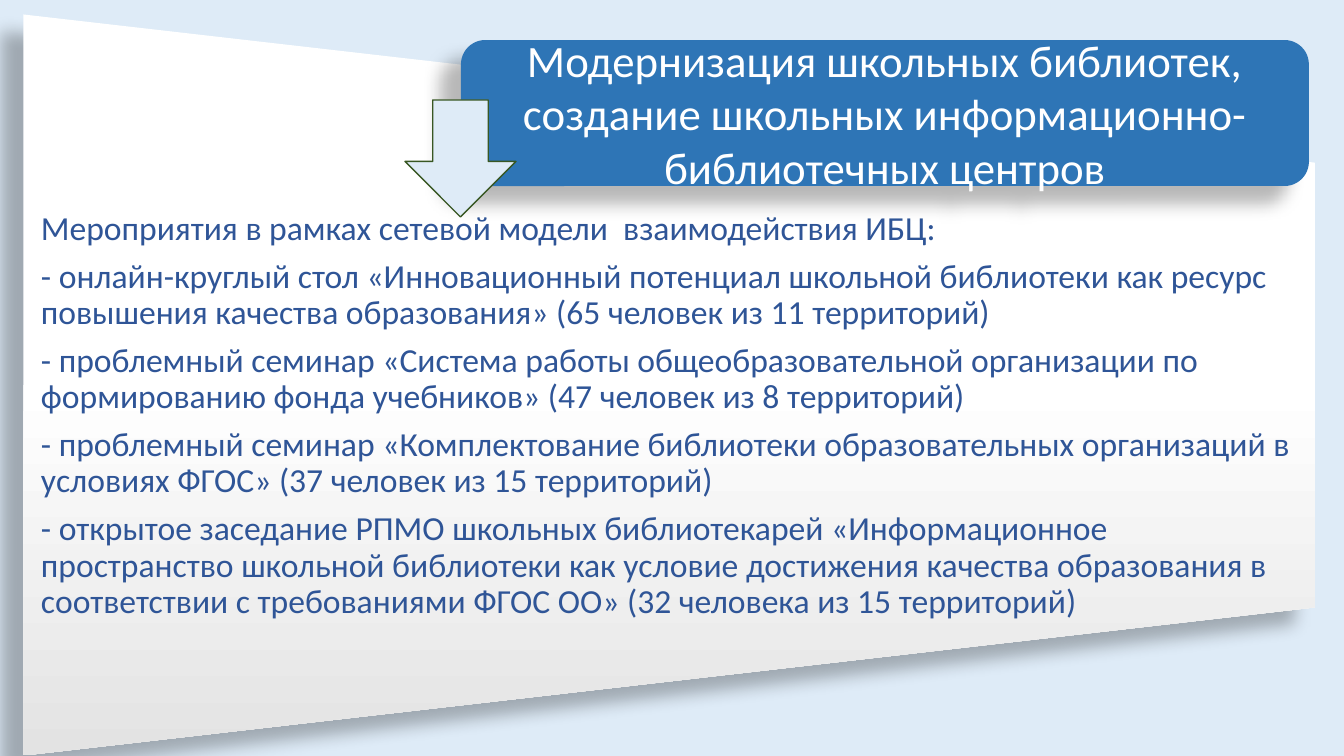
"""Build the slide about modernising school libraries."""
from lxml import etree
from pptx import Presentation
from pptx import util as u
from pptx.dml.color import RGBColor
from pptx.enum import shapes, text
from pptx.oxml import ns, parse_xml

PX = 914400 / 100.8
PALE = RGBColor(0xDE, 0xEB, 0xF7)
BLUE = RGBColor(0x2E, 0x75, 0xB6)
NAVY = RGBColor(0x2F, 0x55, 0x97)
GREEN = RGBColor(0x38, 0x57, 0x23)
WHITE = RGBColor(0xFF, 0xFF, 0xFF)
GRADIENT = f"""<a:gradFill {ns.nsdecls('a')} rotWithShape="0"><a:gsLst>
<a:gs pos="0"><a:srgbClr val="FFFFFF"/></a:gs>
<a:gs pos="50000"><a:srgbClr val="FFFFFF"/></a:gs>
<a:gs pos="100000"><a:srgbClr val="E3E3E3"/></a:gs>
</a:gsLst><a:lin ang="5400000" scaled="0"/></a:gradFill>"""
SHADOW = f"""<a:outerShdw {ns.nsdecls('a')} blurRad="149860" dist="250190" dir="8460000"
algn="ctr" rotWithShape="0"><a:srgbClr val="000000"><a:alpha val="28000"/></a:srgbClr></a:outerShdw>"""


def px(*lengths):
    return [u.Emu(round(length * PX)) for length in lengths]


def write(shape, lines, size, color, align, line_spacing=1.0, space_after=0):
    frame = shape.text_frame
    frame.word_wrap = True
    for index, line in enumerate(lines):
        paragraph = frame.add_paragraph() if index else frame.paragraphs[0]
        paragraph.alignment = align
        paragraph.line_spacing = line_spacing
        paragraph.space_after = u.Pt(space_after)
        run = paragraph.add_run()
        run.text = line
        run.font.name = "Calibri"
        run.font.size = u.Pt(size)
        run.font.color.rgb = color


presentation = Presentation()
presentation.slide_width, presentation.slide_height = px(1344, 756)
slide = presentation.slides.add_slide(presentation.slide_layouts[6])
slide.background.fill.solid()
slide.background.fill.fore_color.rgb = PALE

KIND = shapes.MSO_SHAPE
panel = slide.shapes.add_shape(KIND.FLOWCHART_MANUAL_OPERATION, *px(299, -261, 741, 1292))
panel.rotation = 270
events = slide.shapes.add_textbox(*px(24, 163, 1292, 444))
title = slide.shapes.add_shape(KIND.ROUNDED_RECTANGLE, *px(461, 40, 848, 146))
arrow = slide.shapes.add_shape(KIND.DOWN_ARROW, *px(405, 100, 111, 117))

for shape, color in ((panel, WHITE), (title, BLUE), (arrow, PALE)):
    shape.fill.solid()
    shape.fill.fore_color.rgb = color
    shape.line.fill.background()
    shape.shadow.inherit = False

properties = panel.element.spPr
properties.replace(properties.find(ns.qn("a:solidFill")), parse_xml(GRADIENT))
for shape in (panel, title):
    shape.element.spPr.find(ns.qn("a:effectLst")).append(etree.fromstring(SHADOW))
arrow.line.color.rgb = GREEN
arrow.line.width = u.Pt(1)

frame = events.text_frame
frame.margin_left, frame.margin_top, frame.margin_right, frame.margin_bottom = px(17, 48, 17, 0)
write(events, [
    "Мероприятия в рамках сетевой модели  взаимодействия ИБЦ:",
    "- онлайн-круглый стол «Инновационный потенциал школьной библиотеки как ресурс "
    "повышения качества образования» (65 человек из 11 территорий)",
    "- проблемный семинар «Система работы общеобразовательной организации по "
    "формированию фонда учебников» (47 человек из 8 территорий)",
    "- проблемный семинар «Комплектование библиотеки образовательных организаций в "
    "условиях ФГОС» (37 человек из 15 территорий)",
    "- открытое заседание РПМО школьных библиотекарей «Информационное пространство "
    "школьной библиотеки как условие достижения качества образования в соответствии "
    "с требованиями ФГОС ОО» (32 человека из 15 территорий)",
], 24, NAVY, text.PP_ALIGN.LEFT, line_spacing=0.9, space_after=8.4)

title.text_frame.vertical_anchor = text.MSO_ANCHOR.MIDDLE
write(title, ["Модернизация школьных библиотек, создание школьных "
              "информационно-библиотечных центров"], 32, WHITE, text.PP_ALIGN.CENTER)

presentation.save("out.pptx")
